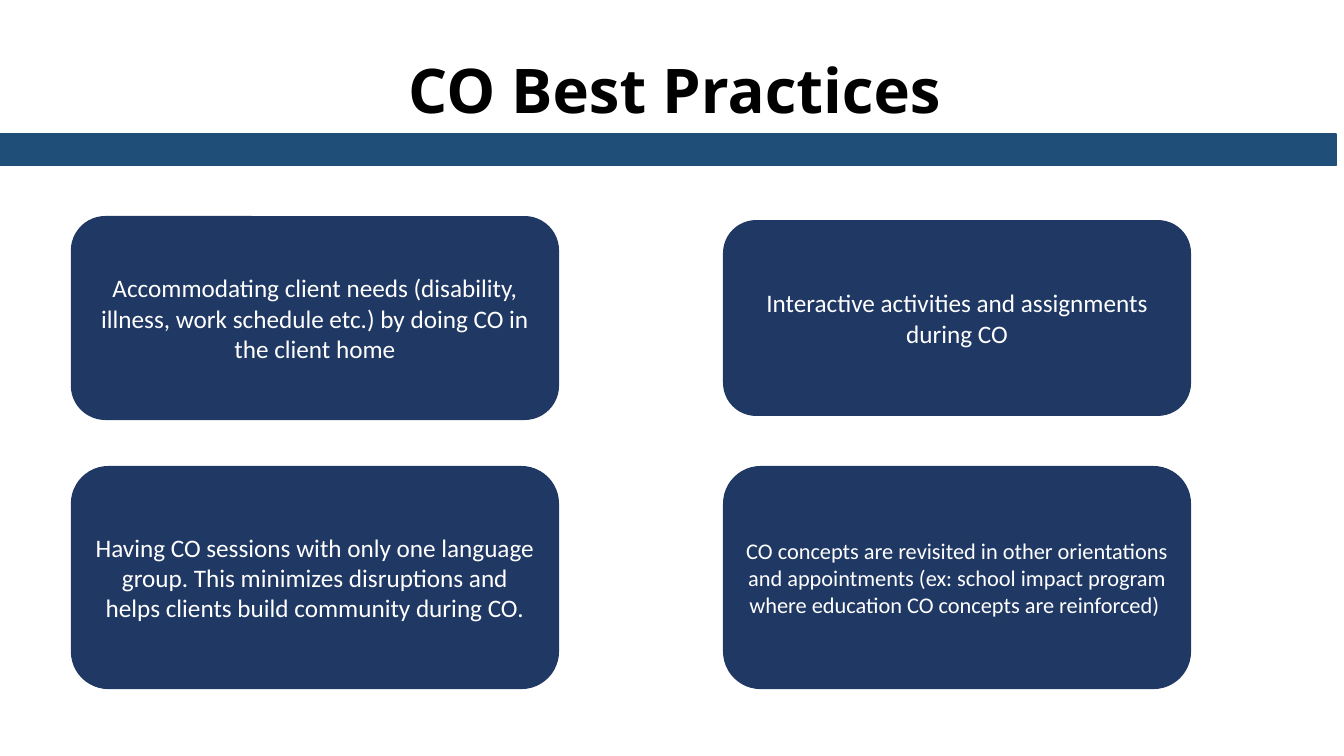
from pptx import Presentation
from pptx.dml.color import RGBColor
from pptx.enum.shapes import MSO_SHAPE
from pptx.enum.text import MSO_ANCHOR, PP_ALIGN
from pptx.util import Pt

RECTANGLE = MSO_SHAPE.RECTANGLE
ROUNDED = MSO_SHAPE.ROUNDED_RECTANGLE
CENTER = PP_ALIGN.CENTER
TOP, MIDDLE = MSO_ANCHOR.TOP, MSO_ANCHOR.MIDDLE

# Content
TITLE = "CO Best Practices"
# Each practice: column, row, height, type size, wording
PRACTICES = [
    (0, 0, 144.72, "card",
     "Accommodating client needs (disability, illness, work schedule etc.) "
     "by doing CO in the client home"),
    (1, 0, 138.96, "card", "Interactive activities and assignments during CO"),
    (0, 1, 158.4, "card",
     "Having CO sessions with only one language group. This minimizes "
     "disruptions and helps clients build community during CO."),
    (1, 1, 158.4, "card_small",
     "CO concepts are revisited in other orientations and appointments "
     "(ex: school impact program where education CO concepts are reinforced) "),
]

THEME = {
    "colors": {
        "title": RGBColor(0x00, 0x00, 0x00),
        "band": RGBColor(0x1F, 0x4E, 0x79),
        "card": RGBColor(0x20, 0x38, 0x64),
        "card_text": RGBColor(0xFF, 0xFF, 0xFF),
    },
    "sizes": {"title": 44, "card": 18, "card_small": 16},
    "fonts": {"title": "Open Sans", "card": "Calibri"},
}

# Layout, in points
SLIDE_SIZE = (960, 540)
TITLE_BOX = (41.76, 33.84, 880.56, 60.48)
BAND_BOX = (-5.76, 95.76, 960, 22.32)
COLUMNS = [(51.12, 347.76), (516.96, 333.36)]  # left, width
ROW_CENTERS = [227.16, 412.56]


def points(box):
    return [Pt(length) for length in box]


def add_block(slide, preset, box, color):
    block = slide.shapes.add_shape(preset, *points(box))
    block.shadow.inherit = False
    block.fill.solid()
    block.fill.fore_color.rgb = color
    block.line.color.rgb = color
    block.line.width = Pt(1)
    return block


def write(holder, wording, font_name, size, color, anchor, bold=False):
    frame = holder.text_frame
    frame.word_wrap = True
    frame.vertical_anchor = anchor
    paragraph = frame.paragraphs[0]
    paragraph.text = wording
    paragraph.alignment = CENTER
    paragraph.font.name = font_name
    paragraph.font.size = Pt(size)
    paragraph.font.bold = bold
    paragraph.font.color.rgb = color


def main():
    deck = Presentation()
    deck.slide_width, deck.slide_height = points(SLIDE_SIZE)
    slide = deck.slides.add_slide(deck.slide_layouts[6])
    colors, sizes, fonts = THEME["colors"], THEME["sizes"], THEME["fonts"]

    # Title and band
    title = slide.shapes.add_textbox(*points(TITLE_BOX))
    write(title, TITLE, fonts["title"], sizes["title"], colors["title"], TOP, bold=True)
    add_block(slide, RECTANGLE, BAND_BOX, colors["band"])

    # Practice cards, centred on their rows
    for column, row, height, size, wording in PRACTICES:
        left, width = COLUMNS[column]
        top = ROW_CENTERS[row] - height / 2
        card = add_block(slide, ROUNDED, (left, top, width, height), colors["card"])
        write(card, wording, fonts["card"], sizes[size], colors["card_text"], MIDDLE)

    deck.save("out.pptx")


if __name__ == "__main__":
    main()
